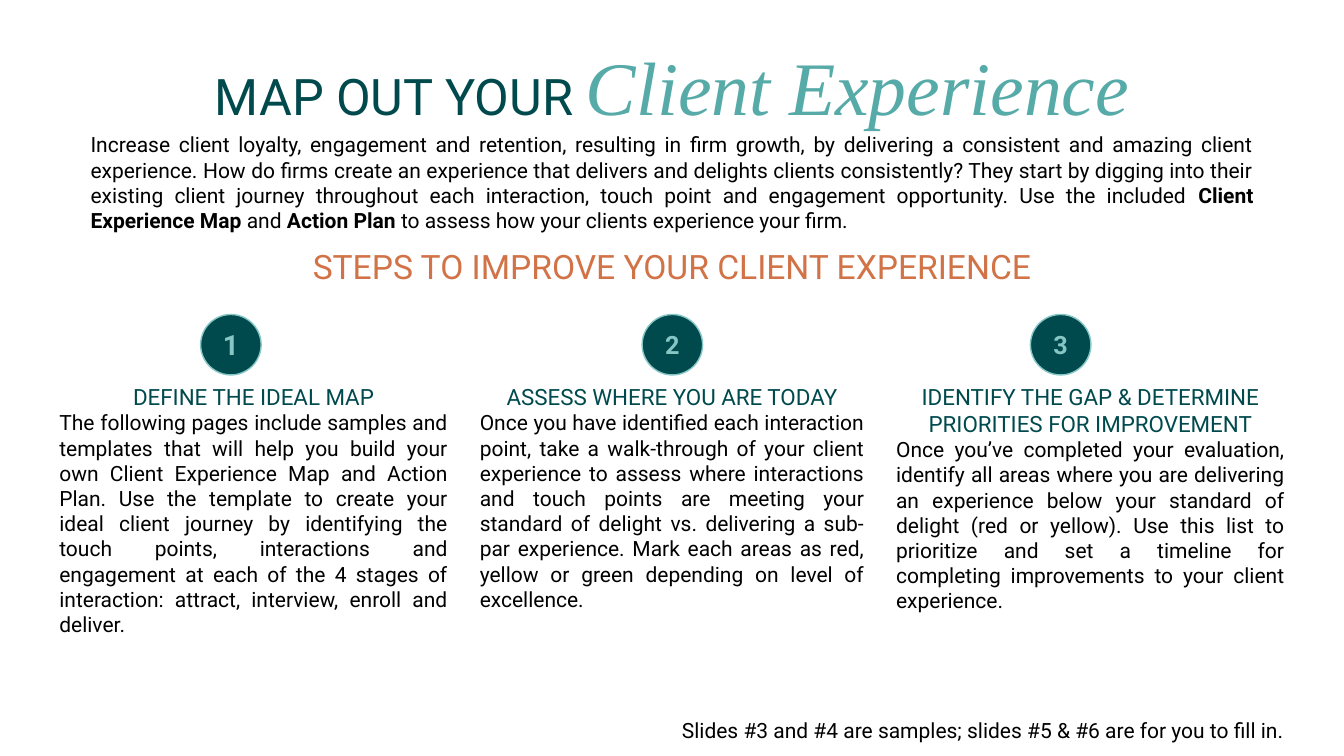
"""Build the client experience slide: title, introduction, three numbered steps and a footnote."""
from pptx import Presentation, util as u
from pptx.dml.color import RGBColor
from pptx.enum import shapes, text

THEME = {
    "heading": {"size": 36, "name": "Roboto", "color": "004A4D"},
    "script": {"size": 54, "name": "Times New Roman", "color": "56ABA8", "italic": True},
    "body": {"size": 15, "name": "Roboto", "color": "000000"},
    "strong": {"size": 15, "name": "Roboto", "color": "000000", "bold": True},
    "section": {"size": 24, "name": "Roboto", "color": "D17346"},
    "step": {"size": 16, "name": "Roboto", "color": "004A4D"},
    "first number": {"size": 20, "name": "Roboto", "color": "86C6C5", "bold": True},
    "number": {"size": 18, "name": "Roboto", "color": "86C6C5", "bold": True},
    "circle fill": "004A4D",
    "circle line": "86C6C5",
}
LEFT, CENTER, JUSTIFY = text.PP_ALIGN.LEFT, text.PP_ALIGN.CENTER, text.PP_ALIGN.JUSTIFY
TOP, MIDDLE = text.MSO_ANCHOR.TOP, text.MSO_ANCHOR.MIDDLE

presentation = Presentation()
presentation.slide_width, presentation.slide_height = u.Inches(13.33), u.Inches(7.5)
slide = presentation.slides.add_slide(presentation.slide_layouts[6])


def grid(left, top, width, height):
    """Turn percentages of the slide into a position and size."""
    column, row = presentation.slide_width / 100, presentation.slide_height / 100
    return [u.Emu(round(n)) for n in (left * column, top * row, width * column, height * row)]


def write(shape, paragraphs, anchor=TOP):
    """Fill a shape with paragraphs given as (format, [(style, words)])."""
    frame = shape.text_frame
    frame.word_wrap, frame.vertical_anchor = True, anchor
    for index, (layout, runs) in enumerate(paragraphs):
        paragraph = frame.paragraphs[0] if index == 0 else frame.add_paragraph()
        for name, value in layout.items():
            setattr(paragraph, name, value)
        for style, words in runs:
            run = paragraph.add_run()
            run.text = words
            for name, value in THEME[style].items():
                if name == "color":
                    run.font.color.rgb = RGBColor.from_string(value)
                else:
                    setattr(run.font, name, u.Pt(value) if name == "size" else value)


title = slide.shapes.add_textbox(*grid(4.57, 4.67, 90.9, 14.67))
write(title, [({"alignment": CENTER, "line_spacing": 0.9},
               [("heading", "MAP OUT YOUR "), ("script", "Client Experience")])], MIDDLE)

introduction = slide.shapes.add_textbox(*grid(6, 16.8, 88, 26))
write(introduction, [
    ({"alignment": JUSTIFY}, [
        ("body", "Increase client loyalty, engagement and retention, resulting in firm growth, by "
                 "delivering a consistent and amazing client experience. How do firms create an "
                 "experience that delivers and delights clients consistently? They start by digging "
                 "into their existing client journey throughout each interaction, touch point and "
                 "engagement opportunity. Use the included "),
        ("strong", "Client Experience Map "), ("body", "and "), ("strong", "Action Plan "),
        ("body", "to assess how your clients experience your firm."),
    ]),
    ({"alignment": CENTER, "space_before": u.Pt(9.4)},
     [("section", "STEPS TO IMPROVE YOUR CLIENT EXPERIENCE")]),
])

STEPS = [
    (30.38, 17.18, "first number", "DEFINE THE IDEAL MAP",
     "The following pages include samples and templates that will help you build your own Client "
     "Experience Map and Action Plan. Use the template to create your ideal client journey by "
     "identifying the touch points, interactions and engagement at each of the 4 stages of "
     "interaction: attract, interview, enroll and deliver."),
    (30.08, 50.03, "number", "ASSESS WHERE YOU ARE TODAY",
     "Once you have identified each interaction point, take a walk-through of your client "
     "experience to assess where interactions and touch points are meeting your standard of "
     "delight vs. delivering a sub-par experience. Mark each areas as red, yellow or green "
     "depending on level of excellence."),
    (30.38, 78.92, "number", "IDENTIFY THE GAP & DETERMINE PRIORITIES FOR IMPROVEMENT",
     "Once you’ve completed your evaluation, identify all areas where you are delivering an "
     "experience below your standard of delight (red or yellow). Use this list to prioritize and "
     "set a timeline for completing improvements to your client experience."),
]
STEP_GAP, CIRCLE_WIDTH, CIRCLE_HEIGHT = 0.9, 4.5, 8
step_left = 3.68
for number, (width, circle_center, number_style, heading, advice) in enumerate(STEPS, 1):
    step = slide.shapes.add_textbox(*grid(step_left, 50, width, 38.8))
    write(step, [({"alignment": CENTER}, [("step", heading)]),
                 ({"alignment": JUSTIFY}, [("body", advice)])])
    circle = slide.shapes.add_shape(
        shapes.MSO_SHAPE.OVAL,
        *grid(circle_center - CIRCLE_WIDTH / 2, 41.6, CIRCLE_WIDTH, CIRCLE_HEIGHT))
    circle.shadow.inherit = False
    circle.fill.solid()
    circle.fill.fore_color.rgb = RGBColor.from_string(THEME["circle fill"])
    circle.line.color.rgb = RGBColor.from_string(THEME["circle line"])
    circle.line.width = u.Pt(1)
    write(circle, [({"alignment": CENTER}, [(number_style, str(number))])], MIDDLE)
    step_left += width + STEP_GAP

footnote = slide.shapes.add_textbox(*grid(50, 94.27, 49.3, 4.67))
write(footnote, [({"alignment": LEFT}, [
    ("body", "Slides #3 and #4 are samples; slides #5 & #6 are for you to fill in.")])])

presentation.save("out.pptx")
